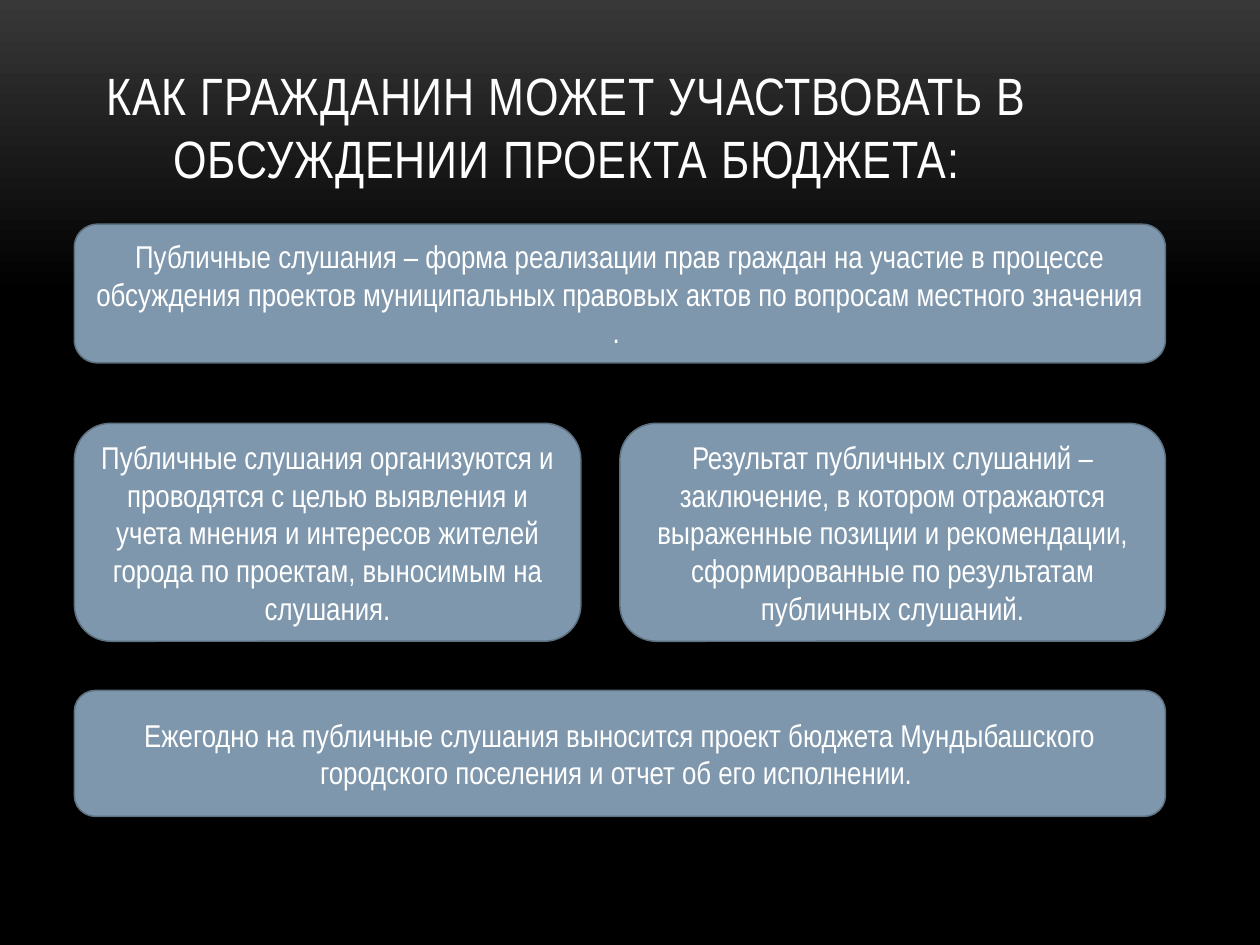
import pptx
import pptx.dml.color
import pptx.enum.shapes
import pptx.enum.text
import pptx.util

TITLE = "КАК ГРАЖДАНИН МОЖЕТ УЧАСТВОВАТЬ В ОБСУЖДЕНИИ ПРОЕКТА БЮДЖЕТА:"
# Each row: top, height, texts of its cards
ROWS = [
    (1.78, 1.1, ["Публичные слушания – форма реализации прав граждан на участие в процессе "
                 "обсуждения проектов муниципальных правовых актов по вопросам местного значения . "]),
    (3.36, 1.73, ["Публичные слушания организуются и проводятся с целью выявления и учета мнения "
                  "и интересов жителей города по проектам, выносимым на слушания.",
                  "Результат публичных слушаний – заключение, в котором отражаются выраженные "
                  "позиции и рекомендации, сформированные по результатам публичных слушаний."]),
    (5.48, 1, ["Ежегодно на публичные слушания выносится проект бюджета Мундыбашского "
               "городского поселения и отчет об его исполнении. "]),
]
LEFT, WIDTH, GAP = 0.59, 8.66, 0.31
FONT = "Arial Narrow"
BACKGROUND_STOPS = [(0, "383838"), (0.31, "000000")]

inches = pptx.util.Inches


def color(value):
    return pptx.dml.color.RGBColor.from_string(value)


def write(shape, text, size, text_color, anchor):
    frame = shape.text_frame
    frame.text = text
    frame.word_wrap = True
    frame.auto_size = pptx.enum.text.MSO_AUTO_SIZE.NONE
    frame.vertical_anchor = anchor
    para = frame.paragraphs[0]
    para.alignment = pptx.enum.text.PP_ALIGN.CENTER
    span = para.runs[0]
    span.font.name = FONT
    span.font.size = pptx.util.Pt(size)
    span.font.color.rgb = color(text_color)
    return span


def add_card(page, left, top, width, height, text):
    card = page.shapes.add_shape(
        pptx.enum.shapes.MSO_SHAPE.ROUNDED_RECTANGLE,
        inches(left), inches(top), inches(width), inches(height))
    card.shadow.inherit = False
    card.fill.solid()
    card.fill.fore_color.rgb = color("7E97AD")
    card.line.color.rgb = color("5D7080")
    card.line.width = pptx.util.Pt(0.85)
    write(card, text, 18, "FFFFFF", pptx.enum.text.MSO_ANCHOR.MIDDLE)


def main():
    deck = pptx.Presentation()
    deck.slide_width, deck.slide_height = inches(10), inches(7.5)
    page = deck.slides.add_slide(deck.slide_layouts[5])

    # Background: grey fading down to black
    fill = page.background.fill
    fill.gradient()
    fill.gradient_angle = 270
    for stop, (position, value) in zip(fill.gradient_stops, BACKGROUND_STOPS):
        stop.position = position
        stop.color.rgb = color(value)

    # Title
    title = page.shapes.title
    title.left, title.top = inches(0), inches(0.3)
    title.width, title.height = inches(9), inches(1.25)
    span = write(title, TITLE, 30, "FEFEFE", pptx.enum.text.MSO_ANCHOR.BOTTOM)
    span.font._element.set("spc", "50")

    # Cards: equal columns, the gap taken from every card but the last in a row
    for top, height, texts in ROWS:
        column = WIDTH / len(texts)
        for index, text in enumerate(texts):
            is_last = index == len(texts) - 1
            width = column if is_last else column - GAP
            add_card(page, LEFT + index * column, top, width, height, text)

    deck.save("out.pptx")


if __name__ == "__main__":
    main()
